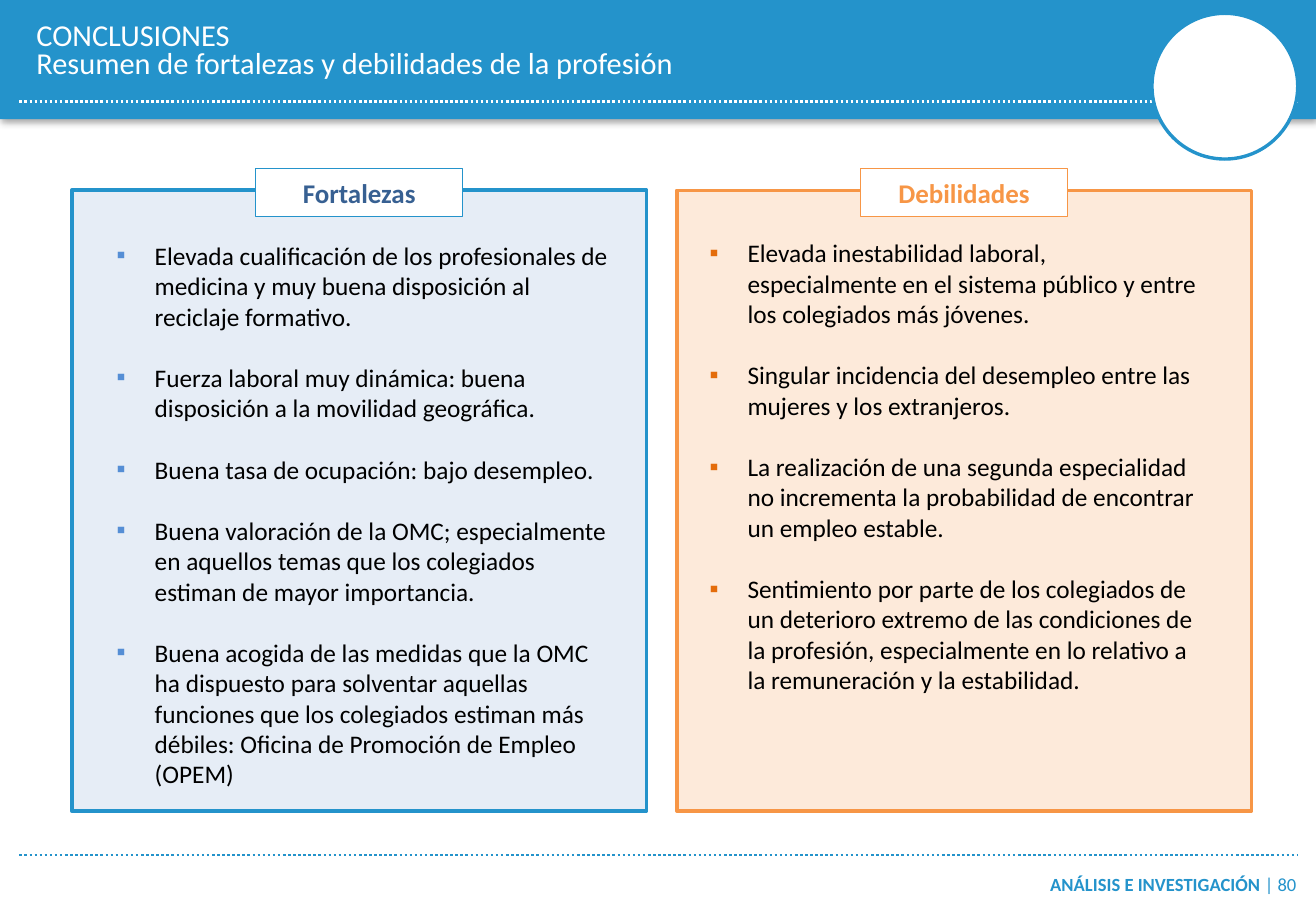
from dataclasses import dataclass

from lxml import etree
from pptx import Presentation
from pptx.dml.color import RGBColor
from pptx.enum.dml import MSO_LINE
from pptx.enum.shapes import MSO_CONNECTOR, MSO_SHAPE
from pptx.enum.text import MSO_ANCHOR, MSO_AUTO_SIZE, PP_ALIGN
from pptx.oxml.ns import qn
from pptx.util import Pt

RECTANGLE, OVAL = MSO_SHAPE.RECTANGLE, MSO_SHAPE.OVAL
STRAIGHT, DOTTED = MSO_CONNECTOR.STRAIGHT, MSO_LINE.ROUND_DOT
LEFT, CENTER, RIGHT = PP_ALIGN.LEFT, PP_ALIGN.CENTER, PP_ALIGN.RIGHT
MIDDLE, NO_AUTOFIT = MSO_ANCHOR.MIDDLE, MSO_AUTO_SIZE.NONE

TITLE = ["CONCLUSIONES", "Resumen de fortalezas y debilidades de la profesión"]
FOOTER = [("ANÁLISIS E INVESTIGACIÓN ", True), ("| 80", False)]
PANELS = [
    {
        "heading": "Fortalezas",
        "fill": "E6EDF6", "border": "2493CB", "border_width": 2.25, "tab_line": 0.5,
        "heading_color": "376092", "bullet": "558ED5",
        "text_at": (19.5, 26.0),
        "points": [
            "Elevada cualificación de los profesionales de medicina y muy buena disposición al reciclaje formativo.",
            "Fuerza laboral muy dinámica: buena disposición a la movilidad geográfica.",
            "Buena tasa de ocupación: bajo desempleo.",
            "Buena valoración de la OMC; especialmente en aquellos temas que los colegiados estiman de mayor importancia.",
            "Buena acogida de las medidas que la OMC ha dispuesto para solventar aquellas funciones que los "
            "colegiados estiman más débiles: Oficina de Promoción de Empleo (OPEM)",
        ],
    },
    {
        "heading": "Debilidades",
        "fill": "FDEADA", "border": "F79646", "border_width": 2, "tab_line": 0.75,
        "heading_color": "F79646", "bullet": "E46C0A",
        "text_at": (12.3, 24.5),
        "points": [
            "Elevada inestabilidad laboral, especialmente en el sistema público y entre los colegiados más jóvenes.",
            "Singular incidencia del desempleo entre las mujeres y los extranjeros.",
            "La realización de una segunda especialidad no incrementa la probabilidad de encontrar un empleo estable.",
            "Sentimiento por parte de los colegiados de un deterioro extremo de las condiciones de la profesión, "
            "especialmente en lo relativo a la remuneración y la estabilidad.",
        ],
    },
]


@dataclass(frozen=True)
class Theme:
    font: str = "Calibri"
    blue: str = "2493CB"
    white: str = "FFFFFF"
    black: str = "000000"
    title_size: float = 18
    heading_size: float = 16
    body_size: float = 15
    footer_size: float = 11


THEME = Theme()
SLIDE_WIDTH, SLIDE_HEIGHT = 780, 540
RULE_LEFT, RULE_RIGHT = 11.5, 769
PANEL_LEFT, PANEL_TOP, PANEL_PITCH = 42.6, 112.8, 358.6
PANEL_WIDTH, PANEL_HEIGHT = 340.6, 368
TAB_WIDTH, TAB_HEIGHT, TAB_RISE = 122.8, 28.4, 12.9
BODY_WIDTH, INDENT = 305.2, 22.5
BLANK_LINE = 18.3


def rgb(value):
    return RGBColor.from_string(value)


def format_text(target, size, color, bold=False):
    font = target.font
    font.name, font.size, font.bold = THEME.font, Pt(size), bold
    font.color.rgb = rgb(color)


def add_box(slide, kind, bounds, fill, line=None, width=0):
    shape = slide.shapes.add_shape(kind, *map(Pt, bounds))
    shape.shadow.inherit = False
    shape.fill.solid()
    shape.fill.fore_color.rgb = rgb(fill)
    if line:
        shape.line.color.rgb = rgb(line)
        shape.line.width = Pt(width)
    else:
        shape.line.fill.background()
    return shape


def add_text_box(slide, bounds):
    box = slide.shapes.add_textbox(*map(Pt, bounds))
    box.text_frame.word_wrap = True
    return box.text_frame


def add_dotted_rule(slide, y, color):
    rule = slide.shapes.add_connector(STRAIGHT, Pt(RULE_LEFT), Pt(y), Pt(RULE_RIGHT), Pt(y))
    rule.line.color.rgb = rgb(color)
    rule.line.width = Pt(1.5)
    rule.line.dash_style = DOTTED
    etree.SubElement(rule._element.spPr, qn("a:effectLst"))


def add_soft_shadow(shape):
    effects = shape._element.spPr.find(qn("a:effectLst"))
    shadow = etree.SubElement(effects, qn("a:outerShdw"), blurRad=str(Pt(5)), dist=str(Pt(1)),
                              dir="5400000", rotWithShape="0")
    color = etree.SubElement(shadow, qn("a:srgbClr"), val=THEME.black)
    etree.SubElement(color, qn("a:alpha"), val="40000")


def add_bullet(paragraph, color):
    properties = paragraph._p.get_or_add_pPr()
    properties.set("marL", str(Pt(INDENT)))
    properties.set("indent", str(-Pt(INDENT)))
    bullet_color = etree.SubElement(properties, qn("a:buClr"))
    etree.SubElement(bullet_color, qn("a:srgbClr"), val=color)
    etree.SubElement(properties, qn("a:buFont"), typeface=THEME.font)
    etree.SubElement(properties, qn("a:buChar"), char="▪")


def add_header(slide):
    band = add_box(slide, RECTANGLE, (0, 0, SLIDE_WIDTH, 70.6), THEME.blue)
    add_soft_shadow(band)
    add_dotted_rule(slide, 60.2, THEME.white)
    add_box(slide, OVAL, (682.8, 7.9, 86.4, 86.4), THEME.white, THEME.blue, 2)

    title = slide.shapes.title
    title.left, title.top, title.width, title.height = map(Pt, (21.6, 7.9, 607, 46.1))
    slide.shapes._spTree.append(title._element)  # bring in front of the band
    frame = title.text_frame
    frame.text = "\n".join(TITLE)
    frame.word_wrap, frame.auto_size, frame.vertical_anchor = True, NO_AUTOFIT, MIDDLE
    frame.margin_left = frame.margin_right = 0
    frame.margin_top = frame.margin_bottom = Pt(5.8)
    for paragraph in frame.paragraphs:
        paragraph.alignment = LEFT
        paragraph.line_spacing = Pt(17)
        format_text(paragraph, THEME.title_size, THEME.white)


def add_panel(slide, index, panel):
    left = PANEL_LEFT + index * PANEL_PITCH
    add_box(slide, RECTANGLE, (left, PANEL_TOP, PANEL_WIDTH, PANEL_HEIGHT),
            panel["fill"], panel["border"], panel["border_width"])

    tab_left = left + (PANEL_WIDTH - TAB_WIDTH) / 2
    tab = add_box(slide, RECTANGLE, (tab_left, PANEL_TOP - TAB_RISE, TAB_WIDTH, TAB_HEIGHT),
                  THEME.white, panel["border"], panel["tab_line"])
    tab.text_frame.text = panel["heading"]
    heading = tab.text_frame.paragraphs[0]
    heading.alignment = CENTER
    format_text(heading, THEME.heading_size, panel["heading_color"], bold=True)

    offset_x, offset_y = panel["text_at"]
    frame = add_text_box(slide, (left + offset_x, PANEL_TOP + offset_y,
                                 BODY_WIDTH, PANEL_HEIGHT - offset_y))
    frame.text = "\n".join(panel["points"])
    for number, paragraph in enumerate(frame.paragraphs):
        if number:
            paragraph.space_before = Pt(BLANK_LINE)
        add_bullet(paragraph, panel["bullet"])
        format_text(paragraph, THEME.body_size, THEME.black)


def add_footer(slide):
    add_dotted_rule(slide, 506.9, THEME.blue)
    frame = add_text_box(slide, (593.3, 509.8, 182.2, 28.8))
    frame.vertical_anchor = MIDDLE
    paragraph = frame.paragraphs[0]
    paragraph.alignment = RIGHT
    for text, bold in FOOTER:
        run = paragraph.add_run()
        run.text = text
        format_text(run, THEME.footer_size, THEME.blue, bold)


def main():
    presentation = Presentation()
    presentation.slide_width, presentation.slide_height = Pt(SLIDE_WIDTH), Pt(SLIDE_HEIGHT)
    slide = presentation.slides.add_slide(presentation.slide_layouts[5])
    add_header(slide)
    for index, panel in enumerate(PANELS):
        add_panel(slide, index, panel)
    add_footer(slide)
    presentation.save("out.pptx")


if __name__ == "__main__":
    main()
